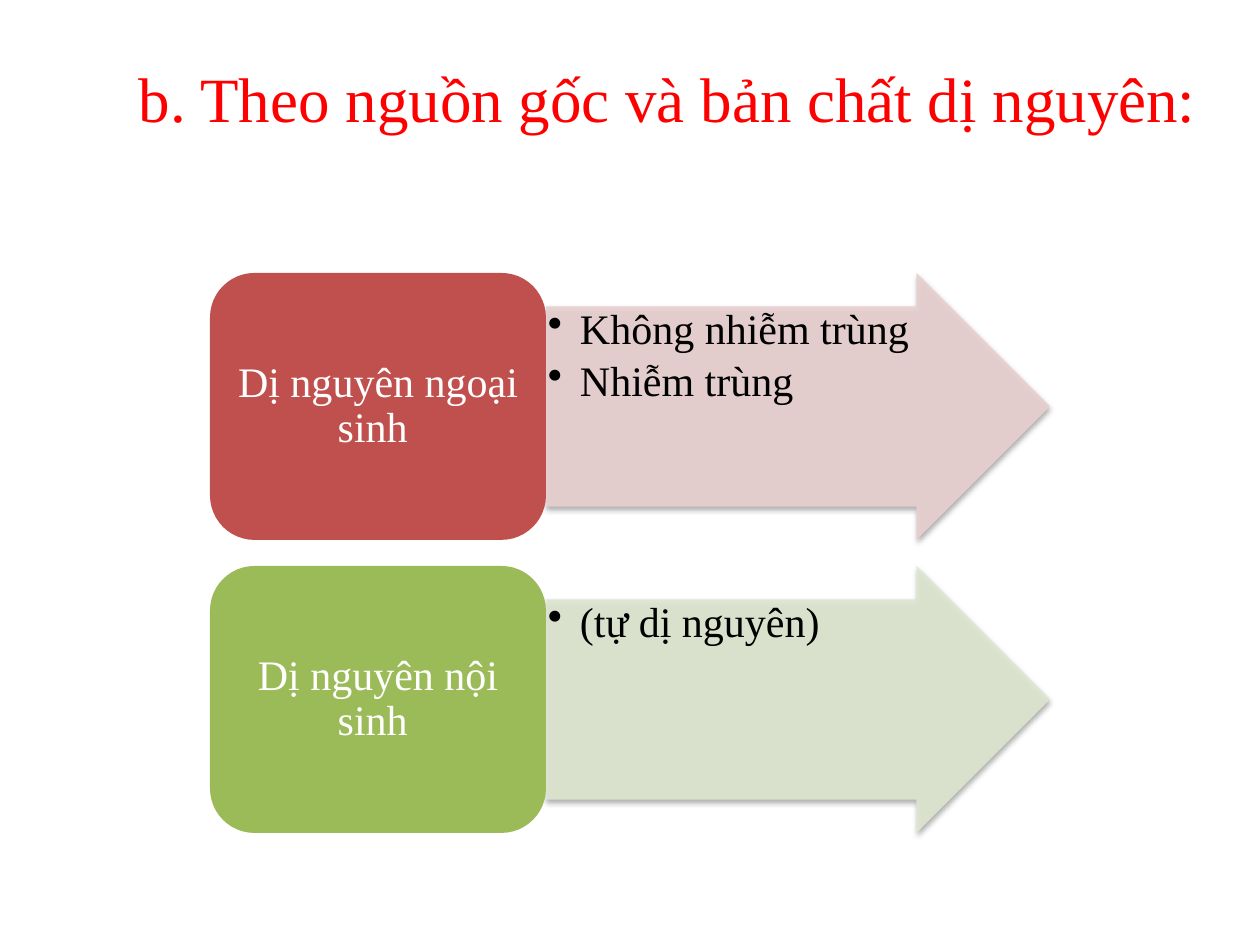
"""Build the slide that groups allergens by origin and nature."""
import lxml.etree
import pptx
import pptx.dml.color
import pptx.enum.shapes
import pptx.enum.text
import pptx.oxml.ns
import pptx.util

TITLE = "b. Theo nguồn gốc và bản chất dị nguyên:"
GROUPS = [
    {"label": "Dị nguyên ngoại sinh ", "items": ["Không nhiễm trùng", "Nhiễm trùng"],
     "block": "C0504D", "arrow": "E8D0D0"},
    {"label": "Dị nguyên nội sinh ", "items": ["(tự dị nguyên)"],
     "block": "9BBB59", "arrow": "DEE7D1"},
]
THEME = {"font": "Times New Roman", "title": "FF0000", "label": "FFFFFF", "item": "000000",
         "shadow": "000000", "title_size": 36, "body_size": 24}

SLIDE_SIZE = (1260, 945)
TITLE_BOX = (126, 53, 1094, 89)
LEFT, TOP = 210, 273
BLOCK_WIDTH, ARROW_WIDTH = 336, 504
ROW_HEIGHT, ROW_GAP = 267, 26
ITEM_INSET, BULLET_INDENT = 2, 32

SHAPES = pptx.enum.shapes.MSO_SHAPE
ALIGN = pptx.enum.text.PP_ALIGN
ANCHOR = pptx.enum.text.MSO_ANCHOR


def px(length):
    return pptx.util.Emu(round(length * 914400 / 126))


def rgb(color):
    return pptx.dml.color.RGBColor.from_string(color)


def add_element(parent, tag, **attributes):
    return lxml.etree.SubElement(parent, pptx.oxml.ns.qn(tag), attributes)


def style_runs(paragraph, size, color):
    for run in paragraph.runs:
        run.font.name = THEME["font"]
        run.font.size = pptx.util.Pt(size)
        run.font.color.rgb = rgb(color)


def add_filled_shape(slide, kind, box, color):
    shape = slide.shapes.add_shape(kind, *map(px, box))
    shape.shadow.inherit = False
    shape.fill.solid()
    shape.fill.fore_color.rgb = rgb(color)
    shape.line.fill.background()
    shape.text_frame.word_wrap = True
    return shape


def add_title(slide):
    title = slide.shapes.title
    title.left, title.top, title.width, title.height = map(px, TITLE_BOX)
    frame = title.text_frame
    frame.text = TITLE
    frame.word_wrap = False
    frame.vertical_anchor = ANCHOR.MIDDLE
    frame.paragraphs[0].alignment = ALIGN.LEFT
    style_runs(frame.paragraphs[0], THEME["title_size"], THEME["title"])


def soften_arrow(arrow):
    properties = arrow.element.spPr
    color = properties.find(pptx.oxml.ns.qn("a:solidFill"))[0]
    add_element(color, "a:alpha", val="90000")
    effects = properties.find(pptx.oxml.ns.qn("a:effectLst"))
    shadow = add_element(effects, "a:outerShdw", blurRad="40000", dist="23000",
                         dir="5400000", rotWithShape="0")
    shadow_color = add_element(shadow, "a:srgbClr", val=THEME["shadow"])
    add_element(shadow_color, "a:alpha", val="35000")


def add_arrow(slide, top, group):
    box = (LEFT + BLOCK_WIDTH, top, ARROW_WIDTH, ROW_HEIGHT)
    arrow = add_filled_shape(slide, SHAPES.RIGHT_ARROW, box, group["arrow"])
    arrow.adjustments[0], arrow.adjustments[1] = 0.75, 0.5
    soften_arrow(arrow)
    frame = arrow.text_frame
    frame.margin_left = frame.margin_right = px(ITEM_INSET)
    frame.margin_top = frame.margin_bottom = px(ITEM_INSET)
    frame.vertical_anchor = ANCHOR.TOP
    frame.text = "\n".join(group["items"])
    for paragraph in frame.paragraphs:
        properties = paragraph._p.get_or_add_pPr()
        properties.set("marL", str(px(BULLET_INDENT)))
        properties.set("indent", str(-px(BULLET_INDENT)))
        add_element(properties, "a:buChar", char="•")
        paragraph.alignment = ALIGN.LEFT
        paragraph.line_spacing = 0.9
        paragraph.space_after = pptx.util.Pt(4)
        style_runs(paragraph, THEME["body_size"], THEME["item"])


def add_block(slide, top, group):
    box = (LEFT, top, BLOCK_WIDTH, ROW_HEIGHT)
    block = add_filled_shape(slide, SHAPES.ROUNDED_RECTANGLE, box, group["block"])
    frame = block.text_frame
    frame.vertical_anchor = ANCHOR.MIDDLE
    frame.text = group["label"]
    paragraph = frame.paragraphs[0]
    paragraph.alignment = ALIGN.CENTER
    paragraph.line_spacing = 0.9
    style_runs(paragraph, THEME["body_size"], THEME["label"])


def main():
    presentation = pptx.Presentation()
    presentation.slide_width, presentation.slide_height = map(px, SLIDE_SIZE)
    slide = presentation.slides.add_slide(presentation.slide_layouts[5])
    add_title(slide)
    for row, group in enumerate(GROUPS):
        top = TOP + row * (ROW_HEIGHT + ROW_GAP)
        add_arrow(slide, top, group)
        add_block(slide, top, group)
    presentation.save("out.pptx")


if __name__ == "__main__":
    main()
